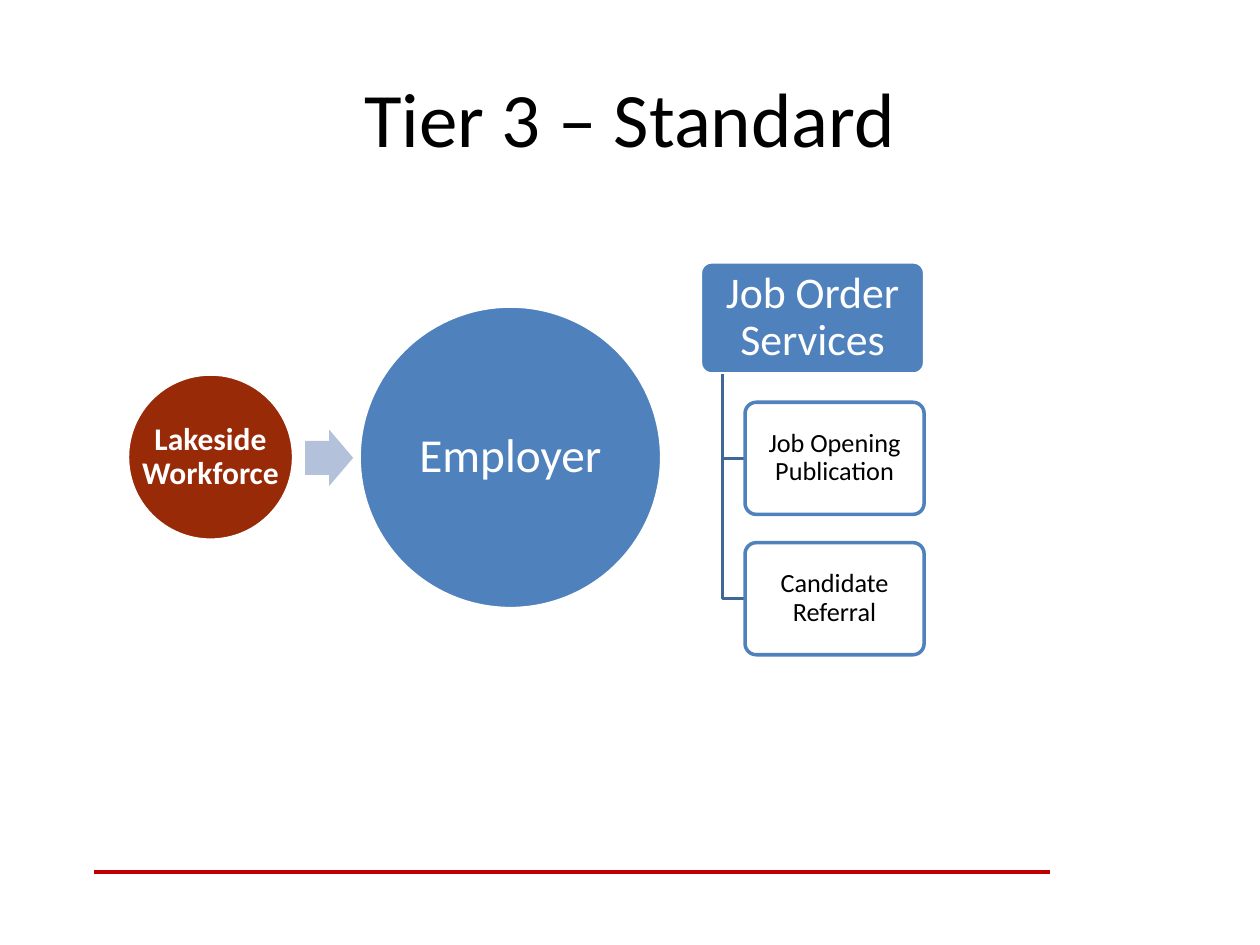
from pptx import Presentation
from pptx.dml.color import RGBColor
from pptx.enum.shapes import MSO_CONNECTOR, MSO_SHAPE
from pptx.enum.text import MSO_ANCHOR, PP_ALIGN
from pptx.util import Cm, Pt
from lxml.etree import SubElement
from pptx.oxml.ns import qn


def color(value):
    return RGBColor.from_string(value)


def add_node(kind, x, y, w, h, fill, line, text="", size=18, ink="FFFFFF", bold=False):
    sp = s.shapes.add_shape(kind, Cm(x), Cm(y), Cm(w), Cm(h))
    sp.shadow.inherit = False
    sp.fill.solid()
    sp.fill.fore_color.rgb = color(fill)
    if line:
        sp.line.color.rgb = color(line)
        sp.line.width = Pt(2)
    else:
        sp.line.fill.background()
    if kind == MSO_SHAPE.ROUNDED_RECTANGLE:
        sp.adjustments[0] = 0.1
    if text:
        tf = sp.text_frame
        tf.text = text
        tf.word_wrap = kind != MSO_SHAPE.OVAL
        tf.vertical_anchor = MSO_ANCHOR.MIDDLE
        tf.margin_left = tf.margin_right = Cm(0.13)
        tf.margin_top = tf.margin_bottom = Cm(0.08)
        p = tf.paragraphs[0]
        p.alignment = PP_ALIGN.CENTER
        p.line_spacing = 0.9
        for r in p.runs:
            r.font.name = "Calibri"
            r.font.size = Pt(size)
            r.font.bold = bold
            r.font.color.rgb = color(ink)
    return sp


prs = Presentation()
prs.slide_width, prs.slide_height = Cm(25.4), Cm(19.05)
s = prs.slides.add_slide(prs.slide_layouts[6])

rule = s.shapes.add_connector(MSO_CONNECTOR.STRAIGHT, Cm(1.9), Cm(17.58), Cm(21.16), Cm(17.58))
rule.line.color.rgb = color("C00000")
rule.line.width = Pt(2.25)
SubElement(rule._element.spPr, qn("a:effectLst"))

title = s.shapes.add_textbox(Cm(1.27), Cm(0.76), Cm(22.86), Cm(3.18))
tf = title.text_frame
tf.text = "Tier 3 – Standard"
tf.word_wrap = True
tf.vertical_anchor = MSO_ANCHOR.MIDDLE
p = tf.paragraphs[0]
p.alignment = PP_ALIGN.CENTER
r = p.runs[0]
r.font.name = "Calibri"
r.font.size = Pt(44)
r.font.color.rgb = color("000000")

top, box_h, step = 5.28, 2.26, 2.83
add_node(MSO_SHAPE.ROUNDED_RECTANGLE, 14.12, top, 4.52, box_h,
         "4F81BD", "FFFFFF", "Job Order Services", 25)

trunk_x, box_x = 14.57, 15.02
for i, text in enumerate(["Job Opening Publication", "Candidate Referral"], start=1):
    y = top + i * step
    mid = y + box_h / 2
    fb = s.shapes.build_freeform(Cm(trunk_x), Cm(top + box_h))
    fb.add_line_segments([(Cm(trunk_x), Cm(mid)), (Cm(box_x), Cm(mid))], close=False)
    branch = fb.convert_to_shape()
    branch.shadow.inherit = False
    branch.fill.background()
    branch.line.color.rgb = color("3F6797")
    branch.line.width = Pt(2)
    add_node(MSO_SHAPE.ROUNDED_RECTANGLE, box_x, y, 3.61, box_h,
             "FFFFFF", "4F81BD", text, 15, "000000")

add_node(MSO_SHAPE.OVAL, 7.24, 6.17, 6.1, 6.1, "4F81BD", "FFFFFF", "Employer", 27)
arrow = add_node(MSO_SHAPE.RIGHT_ARROW, 6.15, 8.66, 0.97, 1.14, "B3C1DB", None)
arrow.adjustments[0] = 0.6
arrow.adjustments[1] = 0.5
add_node(MSO_SHAPE.OVAL, 2.57, 7.54, 3.35, 3.35, "982A08", "FFFFFF",
         "Lakeside\vWorkforce", 18, bold=True)

prs.save("out.pptx")
